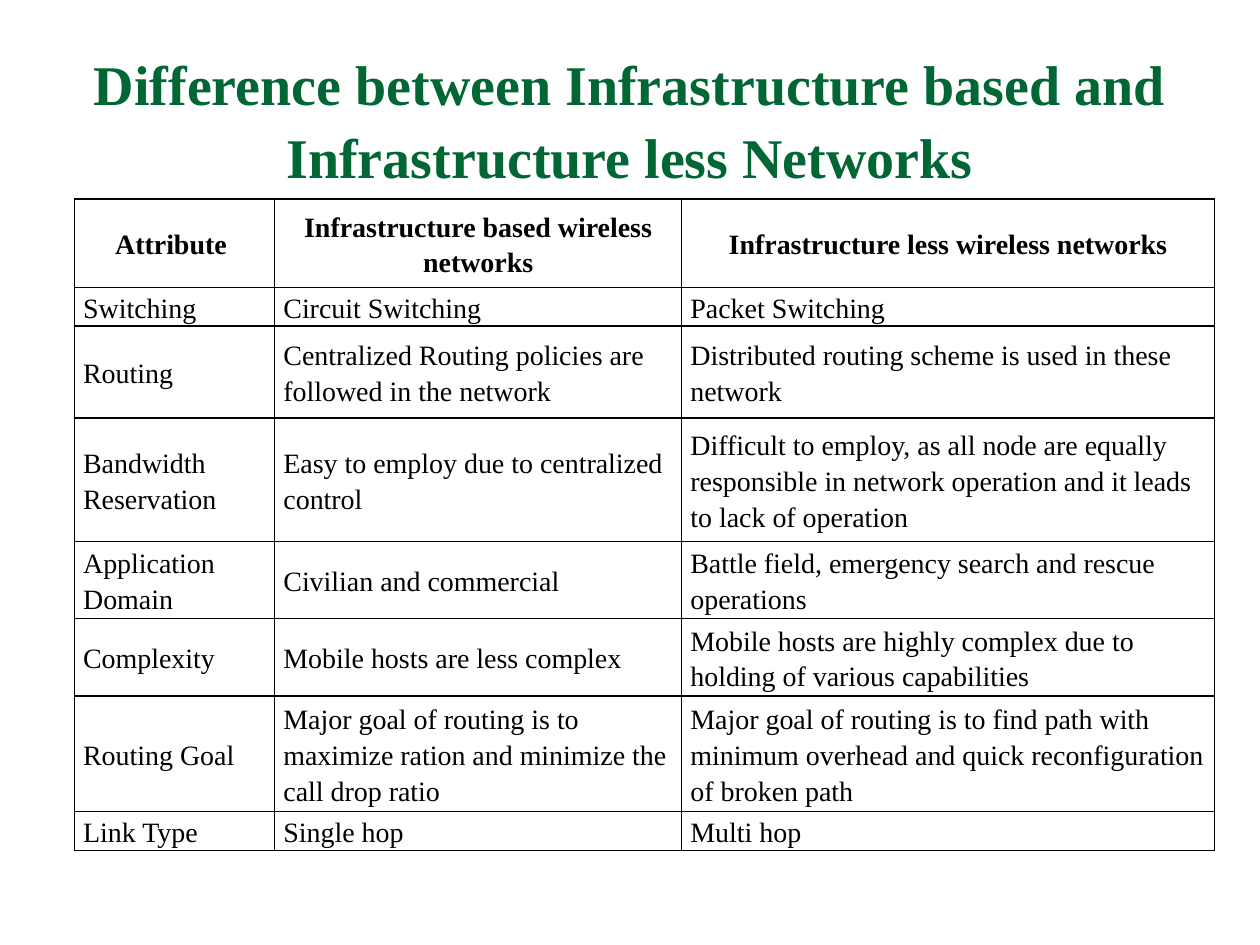
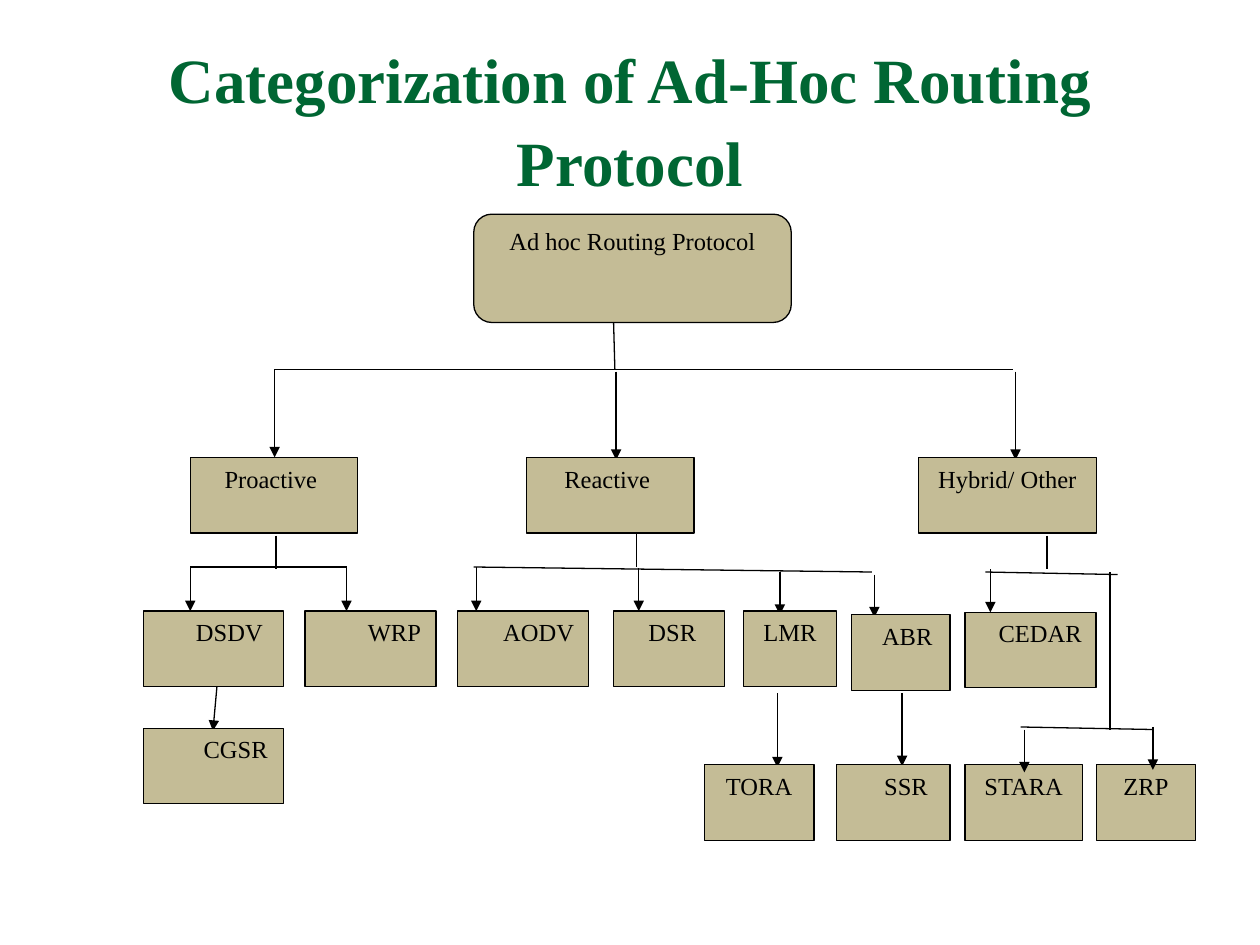
from dataclasses import dataclass

from lxml.etree import SubElement
from pptx import Presentation
from pptx.dml.color import RGBColor
from pptx.enum.shapes import MSO_CONNECTOR, MSO_SHAPE
from pptx.enum.text import MSO_ANCHOR, PP_ALIGN
from pptx.oxml import parse_xml
from pptx.oxml.ns import nsdecls, qn
from pptx.slide import Slide
from pptx.table import _Cell
from pptx.text.text import _Paragraph
from pptx.util import Inches, Pt

GREEN = RGBColor(0x00, 0x66, 0x33)
BLACK = RGBColor(0x00, 0x00, 0x00)
TAN = RGBColor(0xC4, 0xBC, 0x96)
FONT = "Times New Roman"

COLUMN_WIDTHS = (1.59, 3.23, 4.23)
ROW_HEIGHTS = (0.7, 0.24, 0.73, 0.98, 0.49, 0.49, 0.73, 0.24)
COMPARISON = (
    ("Attribute ", "Infrastructure based wireless networks",
     "Infrastructure less wireless networks"),
    ("Switching", "Circuit Switching", "Packet Switching"),
    ("Routing", "Centralized Routing policies are followed in the network",
     "Distributed routing scheme is used in these network"),
    ("Bandwidth Reservation", "Easy to employ due to centralized control",
     "Difficult to employ, as all node are equally responsible in network "
     "operation and it leads to lack of operation"),
    ("Application Domain", "Civilian and commercial",
     "Battle field, emergency search and rescue operations"),
    ("Complexity", "Mobile hosts are less complex",
     "Mobile hosts are highly complex due to holding of various capabilities"),
    ("Routing Goal",
     "Major goal of routing is to maximize ration and minimize the call drop ratio",
     "Major goal of routing is to find path with minimum overhead and quick "
     "reconfiguration of broken path"),
    ("Link Type", "Single hop", "Multi hop"),
)


@dataclass(frozen=True)
class Protocol:
    label: str
    left: float
    top: float
    width: float
    indent: float = 0
    height: float = 0.6
    outline: MSO_SHAPE = MSO_SHAPE.RECTANGLE


@dataclass(frozen=True)
class Link:
    x1: float
    y1: float
    x2: float
    y2: float
    arrow: bool = False


def drop(x: float, top: float, bottom: float) -> Link:
    return Link(x, top, x, bottom, arrow=True)


CATEGORY_TOP, MEMBER_TOP, LAST_TOP = 3.63, 4.85, 6.07

PROTOCOLS = (
    Protocol("Ad hoc Routing Protocol", 3.76, 1.7, 2.52, height=0.86,
             outline=MSO_SHAPE.ROUNDED_RECTANGLE),
    Protocol("Proactive ", 1.51, CATEGORY_TOP, 1.33),
    Protocol("Reactive ", 4.18, CATEGORY_TOP, 1.33),
    Protocol("Hybrid/ Other", 7.29, CATEGORY_TOP, 1.41),
    Protocol("DSDV", 1.14, MEMBER_TOP, 1.11, 0.25),
    Protocol("WRP", 2.42, MEMBER_TOP, 1.04, 0.38),
    Protocol("AODV", 3.63, MEMBER_TOP, 1.04, 0.25),
    Protocol("DSR", 4.87, MEMBER_TOP, 0.88, 0.05),
    Protocol("LMR", 5.9, MEMBER_TOP, 0.74),
    Protocol("ABR", 6.76, 4.88, 0.78, 0.1),
    Protocol("CEDAR", 7.66, 4.86, 1.04, 0.15),
    Protocol("CGSR", 1.14, 5.78, 1.11, 0.35),
    Protocol("TORA", 5.59, LAST_TOP, 0.87),
    Protocol("SSR", 6.64, LAST_TOP, 0.9, 0.2),
    Protocol("STARA", 7.66, LAST_TOP, 0.93),
    Protocol("ZRP", 8.7, LAST_TOP, 0.79),
)

LINKS_BEHIND = (
    Link(4.87, 2.56, 4.88, 2.93),
    Link(2.18, 2.93, 8.04, 2.93),
    drop(2.18, 2.93, 3.63),
    drop(4.89, 2.95, 3.65),
    drop(8.06, 2.95, 3.65),
    Link(2.19, 4.25, 2.19, 4.52),
    Link(1.51, 4.5, 2.75, 4.5),
    drop(1.51, 4.5, 4.85),
    drop(2.75, 4.5, 4.85),
    Link(1.74, 5.25, 1.69, 5.8, arrow=True),
    Link(5.05, 4.23, 5.05, 4.5),
    Link(3.76, 4.5, 6.92, 4.54),
    drop(3.78, 4.5, 4.85),
    drop(5.07, 4.51, 4.85),
    drop(6.19, 4.54, 4.88),
    drop(6.94, 4.56, 4.9),
    drop(6.17, 5.5, 6.09),
    drop(7.16, 5.5, 6.08),
    Link(8.31, 4.25, 8.31, 4.52),
    Link(7.82, 4.54, 8.87, 4.56),
    drop(7.86, 4.52, 4.86),
    Link(8.1, 5.77, 9.15, 5.79),
)
LINKS_IN_FRONT = (
    Link(8.81, 4.54, 8.81, 5.79),
    drop(8.13, 5.79, 6.13),
    drop(9.15, 5.77, 6.11),
)


def style(paragraph: _Paragraph, size: float, color: RGBColor = BLACK,
          bold: bool = False, align: PP_ALIGN = PP_ALIGN.CENTER) -> None:
    paragraph.alignment = align
    font = paragraph.font
    font.name, font.size, font.bold = FONT, Pt(size), bold
    font.color.rgb = color


def add_title(slide: Slide, text: str, size: float) -> None:
    title = slide.shapes.add_textbox(Inches(0.5), Inches(0.3), Inches(9), Inches(1.25))
    frame = title.text_frame
    frame.word_wrap = True
    frame.vertical_anchor = MSO_ANCHOR.MIDDLE
    frame.text = text
    frame.paragraphs[0].line_spacing = 1.09
    style(frame.paragraphs[0], size, GREEN, bold=True)


def add_borders(cell: _Cell) -> None:
    properties = cell._tc.get_or_add_tcPr()
    for position, side in enumerate(("lnL", "lnR", "lnT", "lnB")):
        properties.insert(position, parse_xml(
            f'<a:{side} {nsdecls("a")} w="{Pt(1)}"><a:solidFill>'
            f'<a:srgbClr val="{BLACK}"/></a:solidFill></a:{side}>'))


def add_comparison(slide: Slide) -> None:
    table = slide.shapes.add_table(
        len(COMPARISON), len(COLUMN_WIDTHS), Inches(0.59), Inches(1.58),
        Inches(sum(COLUMN_WIDTHS)), Inches(sum(ROW_HEIGHTS))).table
    table.horz_banding = False
    table.first_row = False
    for column, width in zip(table.columns, COLUMN_WIDTHS):
        column.width = Inches(width)
    for index, (row, height, texts) in enumerate(zip(table.rows, ROW_HEIGHTS, COMPARISON)):
        row.height = Inches(height)
        header = index == 0
        for cell, text in zip(row.cells, texts):
            cell.text = text
            cell.fill.background()
            cell.vertical_anchor = MSO_ANCHOR.MIDDLE
            cell.margin_left = cell.margin_right = Inches(0.07)
            cell.margin_top = cell.margin_bottom = 0
            paragraph = cell.text_frame.paragraphs[0]
            paragraph.line_spacing = 1.15
            style(paragraph, 16, bold=header,
                  align=PP_ALIGN.CENTER if header else PP_ALIGN.LEFT)
            add_borders(cell)


def add_protocol(slide: Slide, protocol: Protocol) -> None:
    box = slide.shapes.add_shape(
        protocol.outline, Inches(protocol.left), Inches(protocol.top),
        Inches(protocol.width), Inches(protocol.height))
    box.shadow.inherit = False
    box.fill.solid()
    box.fill.fore_color.rgb = TAN
    box.line.color.rgb = BLACK
    box.line.width = Pt(0.75)
    frame = box.text_frame
    frame.word_wrap = True
    frame.vertical_anchor = MSO_ANCHOR.TOP
    frame.margin_left = Inches(0.1 + protocol.indent)
    frame.text = protocol.label
    style(frame.paragraphs[0], 14)


def add_link(slide: Slide, link: Link) -> None:
    connector = slide.shapes.add_connector(
        MSO_CONNECTOR.STRAIGHT, Inches(link.x1), Inches(link.y1),
        Inches(link.x2), Inches(link.y2))
    connector.line.color.rgb = BLACK
    connector.line.width = Pt(0.75)
    if link.arrow:
        SubElement(connector.line._get_or_add_ln(), qn("a:tailEnd"), type="triangle")
    SubElement(connector._element.spPr, qn("a:effectLst"))


def main() -> None:
    presentation = Presentation()
    presentation.slide_width, presentation.slide_height = Inches(10), Inches(7.5)
    blank = presentation.slide_layouts[6]

    differences = presentation.slides.add_slide(blank)
    add_title(differences,
              "Difference between Infrastructure based and Infrastructure less Networks", 32)
    add_comparison(differences)

    categories = presentation.slides.add_slide(blank)
    add_title(categories, "Categorization of Ad-Hoc Routing Protocol", 36)
    for link in LINKS_BEHIND:
        add_link(categories, link)
    for protocol in PROTOCOLS:
        add_protocol(categories, protocol)
    for link in LINKS_IN_FRONT:
        add_link(categories, link)

    presentation.save("out.pptx")


if __name__ == "__main__":
    main()
